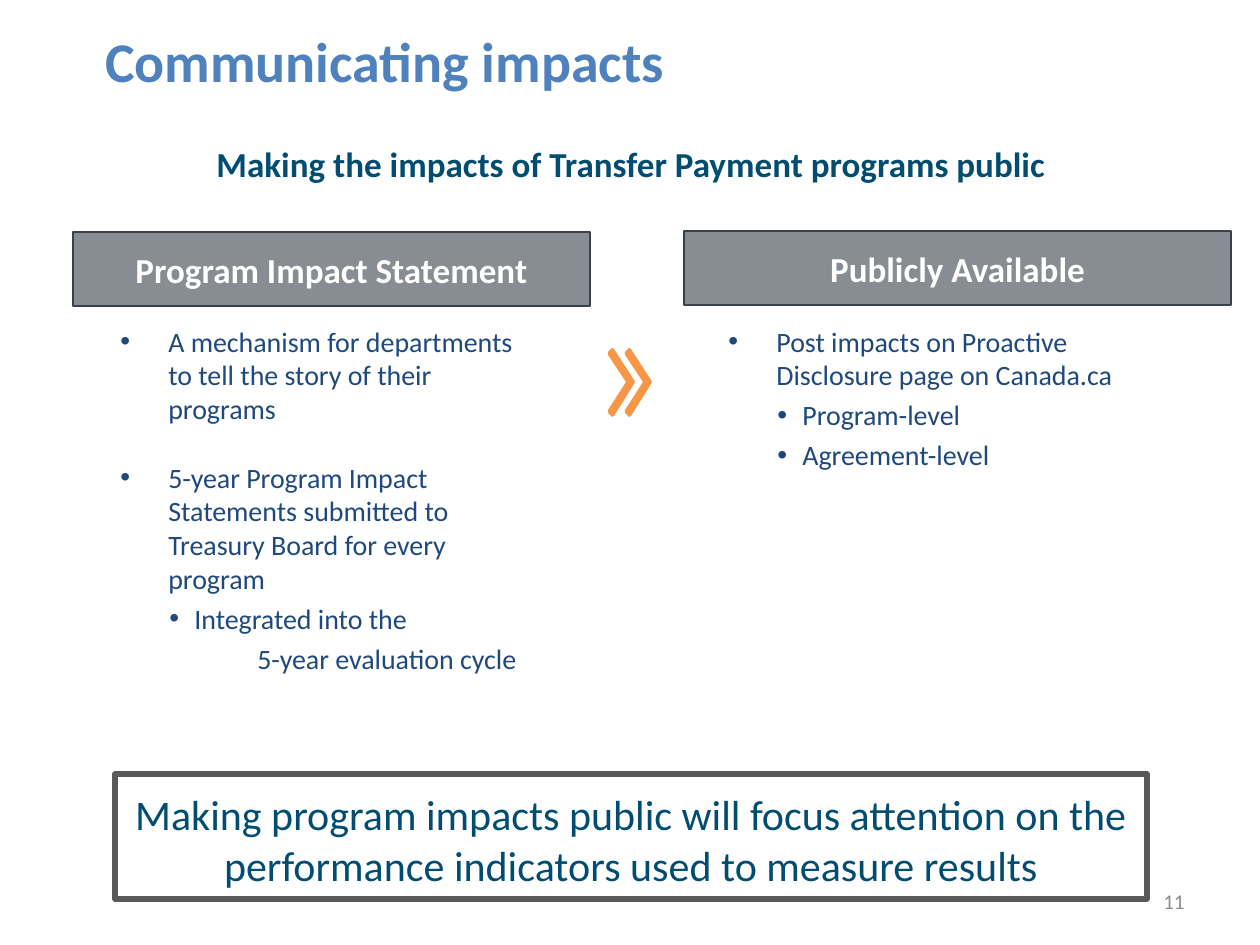
"""Builds the slide on communicating the impacts of transfer payment programs."""
from lxml import etree
from pptx import Presentation, util as u
from pptx.dml.color import RGBColor
from pptx.enum import shapes, text
from pptx.oxml.ns import qn

PX = u.Inches(1) / 126
FONT = "Calibri"
BLUE = RGBColor(0x4F, 0x81, 0xBD)
TEAL = RGBColor(0x00, 0x4D, 0x71)
NAVY = RGBColor(0x1F, 0x49, 0x7D)
WHITE = RGBColor(0xFF, 0xFF, 0xFF)
GREY = RGBColor(0x87, 0x8D, 0x92)
SLATE = RGBColor(0x37, 0x42, 0x4A)
DARK_GREY = RGBColor(0x59, 0x59, 0x59)
PALE_GREY = RGBColor(0x8C, 0x8C, 0x8C)
ORANGE = RGBColor(0xF7, 0x96, 0x46)
LEFT, CENTER, RIGHT = text.PP_ALIGN.LEFT, text.PP_ALIGN.CENTER, text.PP_ALIGN.RIGHT
TOP, MIDDLE = text.MSO_ANCHOR.TOP, text.MSO_ANCHOR.MIDDLE


def box(left, top, width, height):
    return [round(v * PX) for v in (left, top, width, height)]


def write(p, words, size, color, bold=False, align=LEFT):
    p.alignment = align
    r = p.add_run()
    r.text = words
    r.font.name, r.font.size, r.font.bold = FONT, u.Pt(size), bold
    r.font.color.rgb = color


prs = Presentation()
prs.slide_width, prs.slide_height = u.Inches(10), u.Inches(7.5)
s = prs.slides.add_slide(prs.slide_layouts[5])

title = s.shapes.title
title.left, title.top, title.width, title.height = box(105, 0, 748, 121)
tf = title.text_frame
tf.auto_size = text.MSO_AUTO_SIZE.NONE
tf.vertical_anchor = MIDDLE
tf.margin_left = tf.margin_right = tf.margin_top = tf.margin_bottom = 0
write(tf.paragraphs[0], "Communicating impacts", 32, BLUE, True)

labels = [
    ((903, 876, 294, 50), "11", 12, PALE_GREY, False, RIGHT, MIDDLE),
    ((86, 136, 1090, 71), "Making the impacts of Transfer Payment programs public",
     20, TEAL, True, CENTER, TOP),
]
for place, words, size, color, bold, align, anchor in labels:
    tf = s.shapes.add_textbox(*box(*place)).text_frame
    tf.word_wrap = True
    tf.vertical_anchor = anchor
    write(tf.paragraphs[0], words, size, color, bold, align)

panels = [
    ((115, 774, 1032, 125), "Making program impacts public will focus attention on the "
     "performance indicators used to measure results",
     24, TEAL, False, None, DARK_GREY, 3, TOP, 15),
    ((73, 232, 517, 74), "Program Impact Statement", 20, WHITE, True, GREY, SLATE, 1.5, MIDDLE, 12),
    ((684, 231, 547, 74), "Publicly Available", 20, WHITE, True, GREY, SLATE, 1.5, MIDDLE, 12),
]
for place, words, size, color, bold, fill, line, weight, anchor, inset in panels:
    sp = s.shapes.add_shape(shapes.MSO_SHAPE.RECTANGLE, *box(*place))
    sp.shadow.inherit = False
    if fill is None:
        sp.fill.background()
    else:
        sp.fill.solid()
        sp.fill.fore_color.rgb = fill
    sp.line.color.rgb, sp.line.width = line, u.Pt(weight)
    tf = sp.text_frame
    tf.word_wrap = True
    tf.vertical_anchor = anchor
    tf.margin_left = tf.margin_right = tf.margin_top = tf.margin_bottom = round(inset * PX)
    write(tf.paragraphs[0], words, size, color, bold, CENTER)

columns = [
    ((716, 318, 484, 415), [
        ("Post impacts on Proactive Disclosure page on Canada.ca", 1, 48, -48, 0),
        ("Program-level", 2, 74, -25, 3.7),
        ("Agreement-level", 2, 74, -25, 3.7)]),
    ((108, 318, 431, 379), [
        ("A mechanism for departments to tell the story of their programs", 1, 48, -48, 0),
        ("5-year Program Impact Statements submitted to Treasury Board for every program",
         1, 48, -48, 20.3),
        ("Integrated into the", 2, 74, -25, 3.7),
        ("5-year evaluation cycle", 2, 137, 0, 3.7)]),
]
for place, items in columns:
    tf = s.shapes.add_textbox(*box(*place)).text_frame
    tf.word_wrap = True
    for i, (words, level, margin, indent, before) in enumerate(items):
        p = tf.paragraphs[0] if i == 0 else tf.add_paragraph()
        p.level = level
        p.space_before = u.Pt(before)
        pPr = p._p.get_or_add_pPr()
        pPr.set("marL", str(round(margin * PX)))
        pPr.set("indent", str(round(indent * PX)))
        if indent:
            etree.SubElement(pPr, qn("a:buFont"), typeface="Arial")
            etree.SubElement(pPr, qn("a:buChar"), char="•")
        write(p, words, 16, NAVY)

chevron = [(634, 380), (635, 382), (634, 384), (614, 416), (612, 417), (611, 416), (608, 413),
           (608, 410), (626, 382), (608, 355), (608, 352), (611, 349), (612, 348), (614, 349)]
first, second = [[(x + shift, y) for x, y in chevron] for shift in (0, 17)]
builder = s.shapes.build_freeform(*first[0], scale=PX)
builder.add_line_segments(first[1:])
builder.move_to(*second[0])
builder.add_line_segments(second[1:])
sp = builder.convert_to_shape()
sp.shadow.inherit = False
sp.fill.solid()
sp.fill.fore_color.rgb = ORANGE
sp.line.fill.background()

prs.save("out.pptx")
